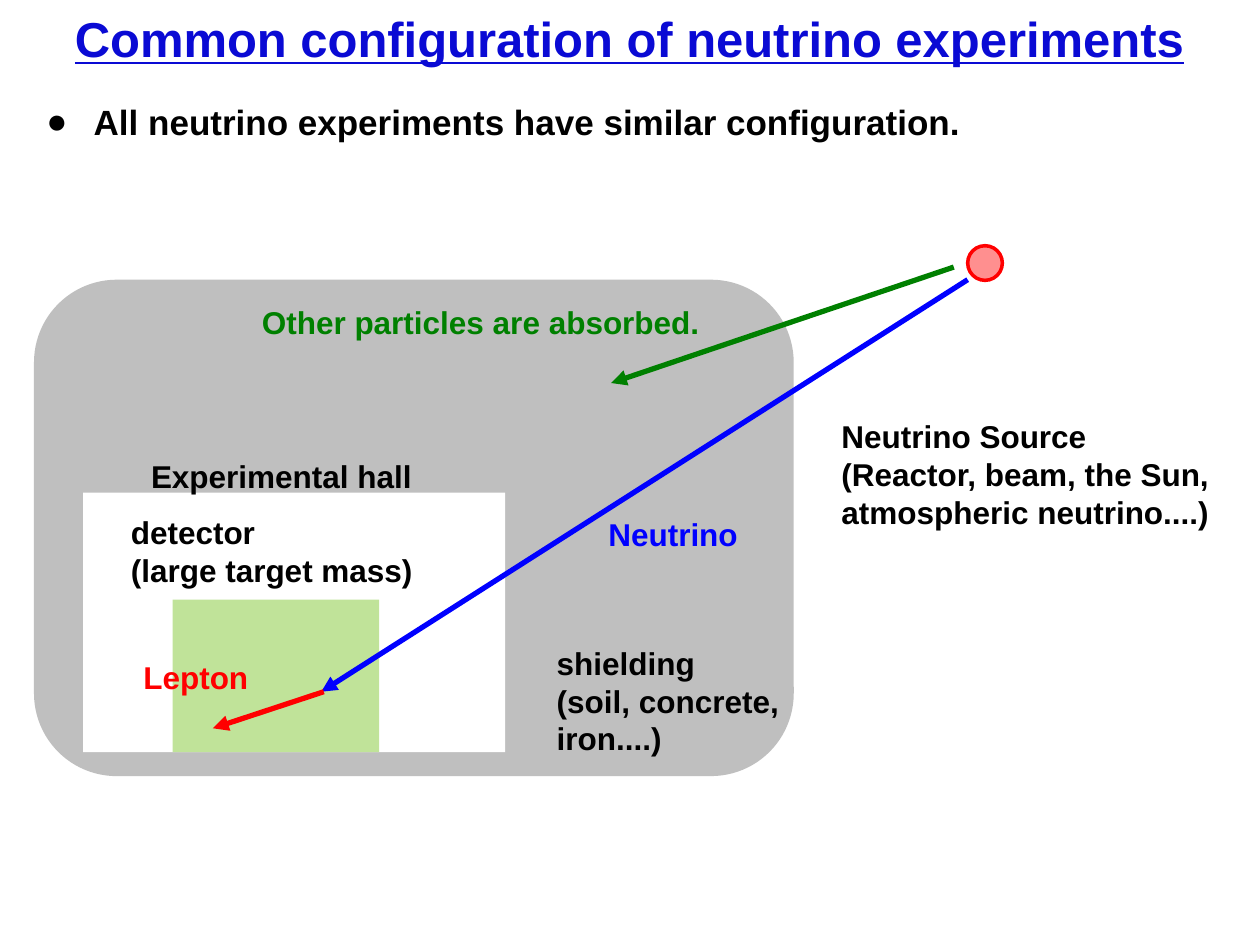
from dataclasses import dataclass
from typing import NamedTuple

from lxml import etree
from pptx import Presentation
from pptx.dml.color import RGBColor
from pptx.enum.shapes import MSO_CONNECTOR, MSO_SHAPE
from pptx.enum.text import PP_ALIGN
from pptx.oxml.ns import qn
from pptx.util import Inches, Pt

RECT, ROUNDED, OVAL = MSO_SHAPE.RECTANGLE, MSO_SHAPE.ROUNDED_RECTANGLE, MSO_SHAPE.OVAL
STRAIGHT = MSO_CONNECTOR.STRAIGHT
LEFT, CENTER = PP_ALIGN.LEFT, PP_ALIGN.CENTER
WIDTH, HEIGHT = Inches(10), Inches(7.5)
COLS, ROWS = 100, 75


@dataclass(frozen=True)
class Theme:
    font: str = "Arial"
    title_size: int = 28
    bullet_size: int = 20
    label_size: int = 18
    outline: int = 2
    arrow: int = 3
    title: str = "0A0AD4"
    text: str = "000000"
    shielding: str = "BFBFBF"
    hall: str = "FFFFFF"
    detector: str = "C0E399"
    source: str = "FF8F8F"
    neutrino: str = "0000FF"
    absorbed: str = "008000"
    lepton: str = "FF0000"


class Box(NamedTuple):
    col: float
    row: float
    cols: float
    rows: float


class Block(NamedTuple):
    shape: MSO_SHAPE
    box: Box
    fill: str
    line: str | None = None


class Label(NamedTuple):
    text: str
    box: Box
    color: str


class Arrow(NamedTuple):
    start: tuple[float, float]
    end: tuple[float, float]
    color: str


T = Theme()

BLOCKS = [
    Block(ROUNDED, Box(2.7, 22.2, 60.3, 39.4), T.shielding),
    Block(OVAL, Box(76.8, 19.5, 2.75, 2.75), T.source, T.lepton),
    Block(RECT, Box(6.6, 39.1, 33.5, 20.6), T.hall),
    Block(RECT, Box(13.7, 47.6, 16.4, 12.1), T.detector),
]
ARROWS = [
    Arrow((76.8, 22.2), (25.5, 54.9), T.neutrino),
    Arrow((75.7, 21.2), (48.5, 30.4), T.absorbed),
    Arrow((25.7, 54.9), (16.9, 57.8), T.lepton),
]
LABELS = [
    Label("shielding\n(soil, concrete, iron....)", Box(43.2, 50.6, 27.6, 10.1), T.text),
    Label("Neutrino Source\n(Reactor, beam, the Sun, atmospheric neutrino....)",
          Box(65.8, 32.6, 32.5, 10.1), T.text),
    Label("detector\n(large target mass)", Box(9.4, 40.2, 29.1, 7.1), T.text),
    Label("Experimental hall", Box(11, 35.8, 29.1, 4), T.text),
    Label("Other particles are absorbed.", Box(19.8, 23.6, 38.5, 4), T.absorbed),
    Label("Neutrino", Box(47.3, 40.4, 15.6, 4), T.neutrino),
    Label("Lepton", Box(10.4, 51.7, 15.6, 4), T.lepton),
]


def x(cols: float) -> int:
    """Turn grid columns into a length."""
    return round(WIDTH * cols / COLS)


def y(rows: float) -> int:
    """Turn grid rows into a length."""
    return round(HEIGHT * rows / ROWS)


def place(box: Box) -> tuple[int, int, int, int]:
    """Turn a grid box into left, top, width and height."""
    return x(box.col), y(box.row), x(box.cols), y(box.rows)


def add_block(s, block: Block) -> None:
    """Draw a filled shape, outlined when it has a line colour."""
    sp = s.shapes.add_shape(block.shape, *place(block.box))
    sp.shadow.inherit = False
    sp.fill.solid()
    sp.fill.fore_color.rgb = RGBColor.from_string(block.fill)
    if block.line:
        sp.line.color.rgb = RGBColor.from_string(block.line)
        sp.line.width = Pt(T.outline)
    else:
        sp.line.fill.background()


def add_arrow(s, arrow: Arrow) -> None:
    """Draw a straight line with a triangle at its end."""
    cx = s.shapes.add_connector(STRAIGHT, x(arrow.start[0]), y(arrow.start[1]),
                                x(arrow.end[0]), y(arrow.end[1]))
    cx.line.color.rgb = RGBColor.from_string(arrow.color)
    cx.line.width = Pt(T.arrow)
    etree.SubElement(cx.line._get_or_add_ln(), qn("a:tailEnd"), type="triangle")
    etree.SubElement(cx._element.spPr, qn("a:effectLst"))


def add_text(s, text: str, box: Box, *, color: str = T.text, size: int = T.label_size,
             align: PP_ALIGN = LEFT, underline: bool = False, bullet: str = "") -> None:
    """Write bold text with one paragraph for each line."""
    tf = s.shapes.add_textbox(*place(box)).text_frame
    tf.word_wrap = True
    tf.text = text
    for p in tf.paragraphs:
        p.alignment = align
        for r in p.runs:
            r.font.name, r.font.size, r.font.bold = T.font, Pt(size), True
            r.font.underline = underline
            r.font.color.rgb = RGBColor.from_string(color)
        if bullet:
            pPr = p._p.get_or_add_pPr()
            pPr.set("marL", str(x(3.75)))
            pPr.set("indent", str(-x(3.75)))
            etree.SubElement(pPr, qn("a:buFont"), typeface=T.font)
            etree.SubElement(pPr, qn("a:buChar"), char=bullet)


def main() -> None:
    """Build the slide and save it."""
    prs = Presentation()
    prs.slide_width, prs.slide_height = WIDTH, HEIGHT
    s = prs.slides.add_slide(prs.slide_layouts[6])
    add_text(s, "Common configuration of neutrino experiments", Box(2.7, 0.2, 94.5, 5.7),
             color=T.title, size=T.title_size, align=CENTER, underline=True)
    add_text(s, "All neutrino experiments have similar configuration.",
             Box(2.7, 7.5, 96.9, 7.4), size=T.bullet_size, bullet="●")
    for block in BLOCKS:
        add_block(s, block)
    for arrow in ARROWS:
        add_arrow(s, arrow)
    for label in LABELS:
        add_text(s, label.text, label.box, color=label.color)
    prs.save("out.pptx")


if __name__ == "__main__":
    main()
